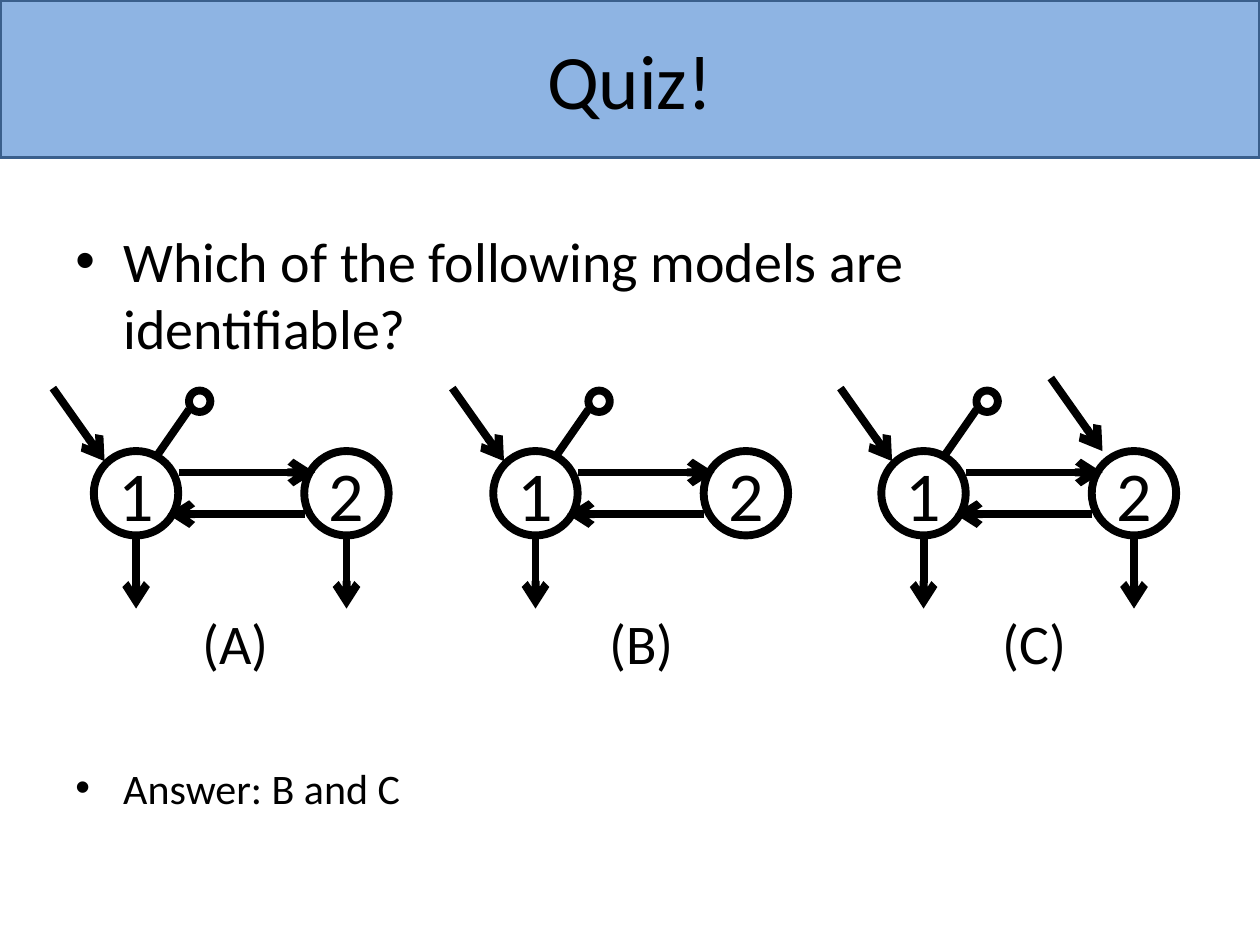
from pptx import Presentation
from pptx.dml.color import RGBColor
from pptx.enum import shapes, text
from pptx.oxml import ns
from pptx.util import Inches, Pt
from lxml import etree

COLORS = {"ink": "000000", "banner": "8EB4E3", "banner_edge": "3A5F8C"}
FONT = "Calibri"
TITLE = "Quiz!"
QUESTION = "Which of the following models are identifiable?"
ANSWER = "Answer: B and C"

MODELS = [
    {"label": "(A)", "x": 1.08, "label_x": 1.87, "leaks": [1, 2], "inputs": [1]},
    {"label": "(B)", "x": 4.25, "label_x": 5.09, "leaks": [1], "inputs": [1]},
    {"label": "(C)", "x": 7.33, "label_x": 8.21, "leaks": [1, 2], "inputs": [1, 2]},
]
SPACING = 1.67
NODE_SIZE, NODE_TOP = 0.67, 3.58
OUTPUT_SIZE = 0.17
STROKE = 4.5
INPUT_TOPS = {1: 3.08, 2: 3.0}


def color(name):
    return RGBColor.from_string(COLORS[name])


def write(shape, words, size, align="CENTER", anchor="MIDDLE", bullet=False, wrap=True, inset=0.1):
    frame = shape.text_frame
    frame.word_wrap = wrap
    frame.vertical_anchor = text.MSO_ANCHOR[anchor]
    frame.margin_left = frame.margin_right = Inches(inset)
    frame.margin_top = frame.margin_bottom = Inches(inset / 2)
    paragraph = frame.paragraphs[0]
    paragraph.alignment = text.PP_ALIGN[align]
    run = paragraph.add_run()
    run.text = words
    run.font.size, run.font.name = Pt(size), FONT
    run.font.color.rgb = color("ink")
    if bullet:
        props = paragraph._p.get_or_add_pPr()
        props.set("marL", str(Inches(0.38)))
        props.set("indent", str(Inches(-0.38)))
        etree.SubElement(props, ns.qn("a:buFont")).set("typeface", "Arial")
        etree.SubElement(props, ns.qn("a:buChar")).set("char", "•")


def add_text(slide, words, left, top, width, height, **style):
    box = slide.shapes.add_textbox(*map(Inches, (left, top, width, height)))
    write(box, words, **style)


def add_figure(slide, kind, left, top, width, height, edge="ink", weight=STROKE, fill=None):
    figure = slide.shapes.add_shape(
        shapes.MSO_SHAPE[kind], *map(Inches, (left, top, width, height)))
    figure.shadow.inherit = False
    if fill:
        figure.fill.solid()
        figure.fill.fore_color.rgb = color(fill)
    else:
        figure.fill.background()
    figure.line.color.rgb = color(edge)
    figure.line.width = Pt(weight)
    return figure


def add_line(slide, x1, y1, x2, y2, arrow=True):
    line = slide.shapes.add_connector(
        shapes.MSO_CONNECTOR.STRAIGHT, *map(Inches, (x1, y1, x2, y2)))
    line.line.color.rgb = color("ink")
    line.line.width = Pt(STROKE)
    if arrow:
        etree.SubElement(line.line._get_or_add_ln(), ns.qn("a:tailEnd")).set("type", "arrow")
    etree.SubElement(line._element.spPr, ns.qn("a:effectLst"))


def add_model(slide, model):
    x = model["x"]
    centers = {1: x, 2: x + SPACING}
    add_line(slide, x + 1.34, 4.08, x + 0.25, 4.08)
    for number, center in centers.items():
        node = add_figure(slide, "OVAL", center - NODE_SIZE / 2, NODE_TOP, NODE_SIZE, NODE_SIZE)
        write(node, str(number), size=40, wrap=False)
    add_line(slide, x + 0.34, 3.75, x + 1.42, 3.75)
    for number in model["leaks"]:
        add_line(slide, centers[number], NODE_TOP + NODE_SIZE, centers[number], 4.83)
    add_line(slide, x + 0.42, 3.25, x + 0.17, 3.61, arrow=False)
    add_figure(slide, "OVAL", x + 0.42, 3.1, OUTPUT_SIZE, OUTPUT_SIZE)
    for number in model["inputs"]:
        start = centers[number] - 0.67
        top = INPUT_TOPS[number]
        add_line(slide, start + 0.01, top, start + 0.42, top + 0.58)
    add_text(slide, model["label"], model["label_x"] - 0.5, 4.8, 1, 0.6, size=32, inset=0)


def main():
    deck = Presentation()
    deck.slide_width, deck.slide_height = Inches(10), Inches(7.5)
    slide = deck.slides.add_slide(deck.slide_layouts[6])
    banner = add_figure(slide, "RECTANGLE", 0, 0, 10, 1.25,
                        edge="banner_edge", weight=2, fill="banner")
    write(banner, TITLE, size=44)
    add_text(slide, QUESTION, 0.5, 1.75, 9, 1.2,
             size=32, align="LEFT", anchor="TOP", bullet=True)
    for model in MODELS:
        add_model(slide, model)
    add_text(slide, ANSWER, 0.5, 6, 9, 0.5, size=24, align="LEFT", bullet=True)
    deck.save("out.pptx")


if __name__ == "__main__":
    main()
